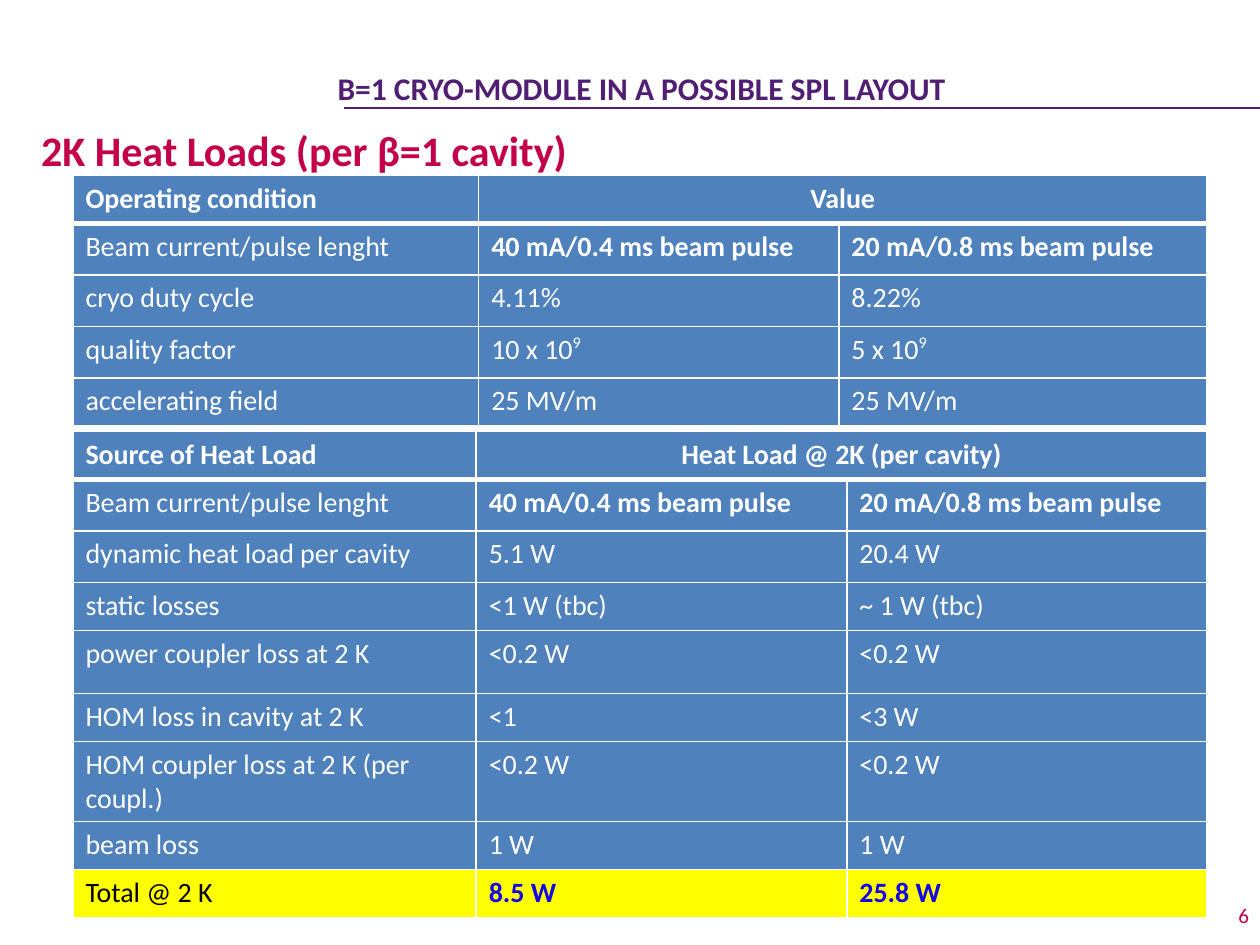
from dataclasses import dataclass

from lxml.etree import SubElement
from pptx import Presentation
from pptx.dml.color import RGBColor
from pptx.enum.text import MSO_ANCHOR, PP_ALIGN
from pptx.oxml import parse_xml
from pptx.oxml.ns import nsdecls, qn
from pptx.util import Cm, Pt

HUES = {
    "white": "FFFFFF", "black": "000000", "blue": "4F81BD",
    "yellow": "FFFF00", "ink": "1505EB", "plum": "501F74", "rose": "C3004A",
}
FACE = "Calibri"
PULSE = ("Beam current/pulse lenght", "40 mA/0.4 ms beam pulse",
         "20 mA/0.8 ms beam pulse")


@dataclass
class Grid:
    top: float
    cols: tuple[float, ...]
    rows: tuple[float, ...]
    head: tuple[str, str]
    body: list[tuple[str, str, str]]
    total: bool = False


GRIDS = [
    Grid(3.53, (8.18, 7.26, 7.42), (0.97, 1.04, 1.04, 1.04, 0.97),
         ("Operating condition", "Value"),
         [PULSE,
          ("cryo duty cycle", "4.11%", "8.22%"),
          ("quality factor", "10 x 10^9", "5 x 10^9"),
          ("accelerating field", "25 MV/m", "25 MV/m")]),
    Grid(8.69, (8.13, 7.47, 7.26),
         (0.97, 1.04, 1.04, 0.97, 1.27, 0.97, 1.57, 0.97, 0.97),
         ("Source of Heat Load", "Heat Load @ 2K (per cavity)"),
         [PULSE,
          ("dynamic heat load per cavity", "5.1 W", "20.4 W"),
          ("static losses", "<1 W (tbc)", "~ 1 W (tbc)"),
          ("power coupler loss at 2 K", "<0.2 W", "<0.2 W"),
          ("HOM loss in cavity at 2 K", "<1", "<3 W"),
          ("HOM coupler loss at 2 K (per coupl.)", "<0.2 W", "<0.2 W"),
          ("beam loss", "1 W", "1 W"),
          ("Total @ 2 K", "8.5 W", "25.8 W")], total=True),
]


def tint(name: str) -> RGBColor:
    return RGBColor.from_string(HUES[name])


def write(para, text: str, size: float, hue: str, bold: bool = False,
          align=PP_ALIGN.LEFT) -> None:
    """Fill a paragraph; what follows a caret is raised."""
    base, _, power = text.partition("^")
    para.add_run().text = base
    if power:
        run = para.add_run()
        run.text = power
        run._r.get_or_add_rPr().set("baseline", "40000")
    para.alignment = align
    font = para.font
    font.name, font.size, font.bold = FACE, Pt(size), bold
    font.color.rgb = tint(hue)


def place(shape, left: float, top: float, width: float, height: float,
          anchor) -> None:
    shape.left, shape.top = Cm(left), Cm(top)
    shape.width, shape.height = Cm(width), Cm(height)
    shape.text_frame.word_wrap = True
    shape.text_frame.vertical_anchor = anchor


def edge(cell, head: bool, below: bool) -> None:
    """Draw white cell borders, heavy between the head and the body."""
    widths = {"L": 1, "R": 1, "T": 3 if below else 1, "B": 3 if head else 1}
    props = cell._tc.get_or_add_tcPr()
    for spot, (side, width) in enumerate(widths.items()):
        props.insert(spot, parse_xml(
            f'<a:ln{side} {nsdecls("a")} w="{Pt(width)}"><a:solidFill>'
            f'<a:srgbClr val="{HUES["white"]}"/></a:solidFill></a:ln{side}>'))


def draw(slide, grid: Grid) -> None:
    count = len(grid.rows)
    table = slide.shapes.add_table(
        count, 3, Cm(1.47), Cm(grid.top), Cm(sum(grid.cols)),
        Cm(sum(grid.rows))).table
    table.first_row = table.horz_banding = False
    for col, width in zip(table.columns, grid.cols):
        col.width = Cm(width)
    for row, height in zip(table.rows, grid.rows):
        row.height = Cm(height)
    table.cell(0, 1).merge(table.cell(0, 2))
    for r, texts in enumerate([(*grid.head, ""), *grid.body]):
        last = grid.total and r == count - 1
        for c, text in enumerate(texts):
            cell = table.cell(r, c)
            cell.fill.solid()
            cell.fill.fore_color.rgb = tint("yellow" if last else "blue")
            edge(cell, r == 0, r == 1)
            if not text:
                continue
            hue = ("ink" if c else "black") if last else "white"
            bold = r == 0 or (c > 0 and (r == 1 or last))
            mid = r == 0 and c == 1
            write(cell.text_frame.paragraphs[0], text, 16, hue, bold,
                  PP_ALIGN.CENTER if mid else PP_ALIGN.LEFT)


def main() -> None:
    deck = Presentation()
    deck.slide_width, deck.slide_height = Cm(25.4), Cm(19.05)
    slide = deck.slides.add_slide(deck.slide_layouts[5])

    # Rule under the title
    rule = slide.shapes.add_connector(1, Cm(6.93), Cm(2.18), Cm(25.4), Cm(2.18))
    rule.line.color.rgb = tint("plum")
    rule.line.width = Pt(1.5)
    SubElement(rule._element.spPr, qn("a:effectLst"))

    # Title
    title = slide.shapes.title
    place(title, 6.55, 0.79, 18.26, 1.98, MSO_ANCHOR.MIDDLE)
    write(title.text_frame.paragraphs[0],
          "Β=1 CRYO-MODULE IN A POSSIBLE SPL LAYOUT", 18, "plum", True)

    # Subtitle and page number
    sub = slide.shapes.add_textbox(0, 0, 0, 0)
    place(sub, 0.58, 2.39, 13.28, 0.99, MSO_ANCHOR.TOP)
    write(sub.text_frame.paragraphs[0], "2K Heat Loads (per β=1 cavity)",
          24, "rose", True)
    page = slide.shapes.add_textbox(0, 0, 0, 0)
    place(page, 23.83, 18.06, 1.6, 0.79, MSO_ANCHOR.MIDDLE)
    write(page.text_frame.paragraphs[0], "6", 12, "rose",
          align=PP_ALIGN.RIGHT)

    # Tables
    for grid in GRIDS:
        draw(slide, grid)

    deck.save("out.pptx")


if __name__ == "__main__":
    main()
